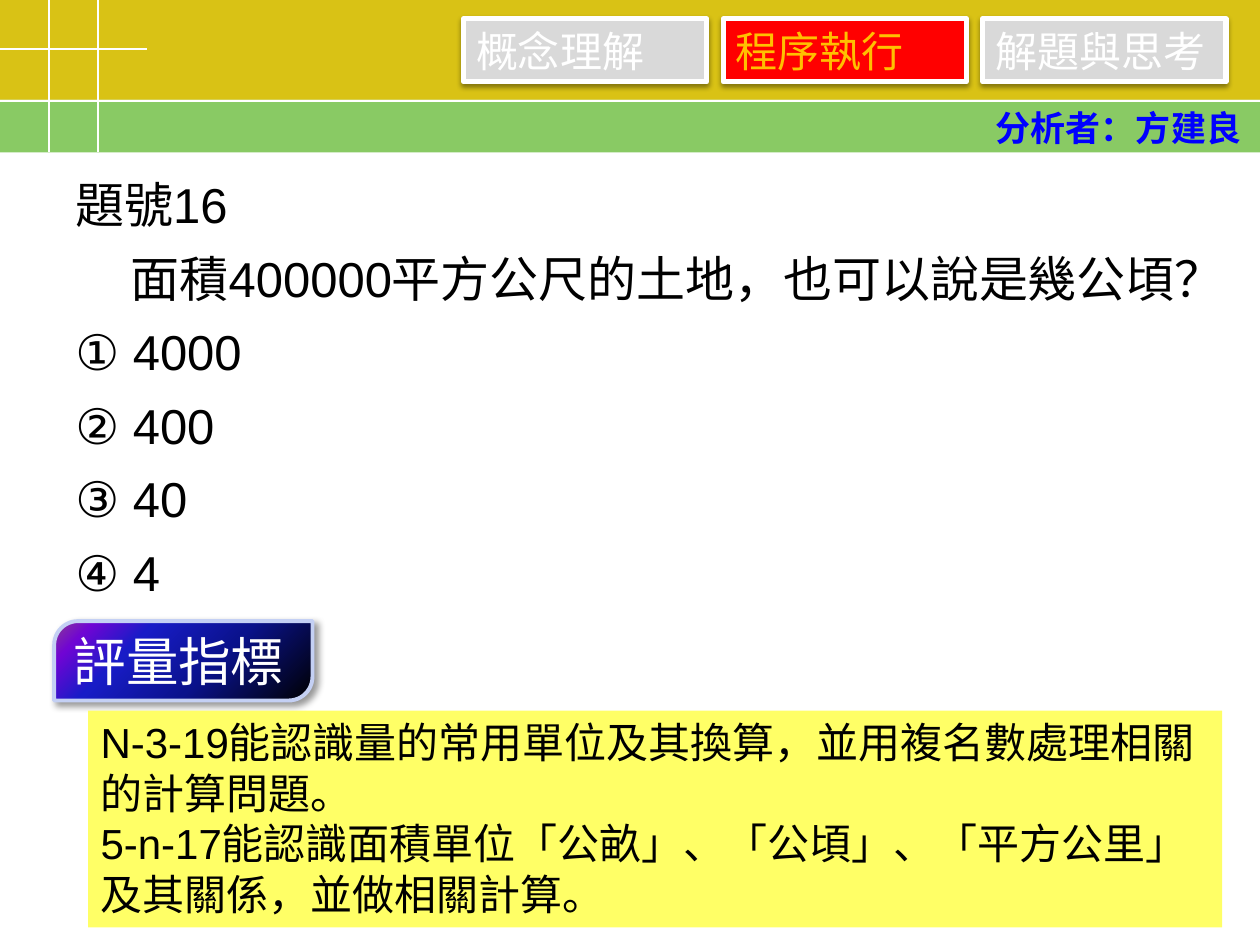
from lxml import etree
from pptx import Presentation
from pptx.dml.color import RGBColor
from pptx.enum import shapes, text
from pptx.oxml.ns import qn
from pptx.util import Inches, Pt

CJK = "Noto Sans CJK JP"


def rgb(value):
    """Turn a hex string into a colour."""
    return RGBColor.from_string(value)


def add_colour(parent, value, alpha=100):
    """Append a colour element with an opacity in percent."""
    clr = etree.SubElement(parent, qn("a:srgbClr"), val=value)
    if alpha < 100:
        etree.SubElement(clr, qn("a:alpha"), val=str(alpha * 1000))


def add_shadow(sp, alpha, blur, dist, angle):
    """Give a shape a black outer shadow."""
    effects = sp._element.spPr.find(qn("a:effectLst"))
    shadow = etree.SubElement(
        effects, qn("a:outerShdw"), blurRad=str(Pt(blur)), dist=str(Pt(dist)),
        dir=str(angle * 60000), algn="tl", rotWithShape="0")
    add_colour(shadow, "000000", alpha)


def add_box(s, box, fill=None, line=None, width=1, kind=shapes.MSO_SHAPE.RECTANGLE):
    """Add a preset shape with a plain fill and an optional line."""
    sp = s.shapes.add_shape(kind, *map(Inches, box))
    sp.shadow.inherit = False
    if fill:
        sp.fill.solid()
        sp.fill.fore_color.rgb = rgb(fill)
    if line:
        sp.line.color.rgb = rgb(line)
        sp.line.width = Pt(width)
    else:
        sp.line.fill.background()
    return sp


def add_line(s, x1, y1, x2, y2):
    """Add a thin white line."""
    line = s.shapes.add_connector(shapes.MSO_CONNECTOR.STRAIGHT, *map(Inches, (x1, y1, x2, y2)))
    line.line.color.rgb = rgb("FFFFFF")
    line.line.width = Pt(1)
    etree.SubElement(line._element.spPr, qn("a:effectLst"))


def write(sp, lines, size, colour, align=text.PP_ALIGN.LEFT, font="Arial",
          anchor=text.MSO_ANCHOR.TOP, bold=False, spacing=None):
    """Write one paragraph per line and return the paragraphs."""
    tf = sp.text_frame
    tf.word_wrap = True
    tf.vertical_anchor = anchor
    tf.text = "\n".join(lines)
    for p in tf.paragraphs:
        p.alignment = align
        if spacing:
            p.line_spacing = Pt(spacing)
        p.font.size = Pt(size)
        p.font.name = font
        p.font.bold = bold
        p.font.color.rgb = rgb(colour)
    return tf.paragraphs


def add_header(s, box):
    """Draw the two colour bands and the white grid lines."""
    x, y, w, h = box
    upper = 0.79
    add_box(s, (x, y + upper, w, h - upper), "89CA64")
    add_box(s, (x, y, w, upper), "D9C215")
    for step in (0.39, 0.78):
        add_line(s, x + step, y, x + step, y + h)
    add_line(s, x, y + 0.39, x + 1.17, y + 0.39)
    add_line(s, x, y + 0.8, x + w, y + 0.8)


def add_tabs(s, box, labels, active):
    """Place the category tabs and highlight the active one."""
    x, y, w, h = box
    tab = 1.93
    step = (w - tab) / (len(labels) - 1)
    for i, label in enumerate(labels):
        fill, colour = ("FF0000", "FFC000") if i == active else ("D9D9D9", "FFFFFF")
        sp = add_box(s, (x + i * step, y, tab, h), fill, "FFFFFF", 3)
        add_shadow(sp, 38, 3.1, 1.6, 90)
        write(sp, [label], 24, colour, text.PP_ALIGN.JUSTIFY, CJK)


def add_author(s, box, name):
    """Write the analyst's name."""
    sp = s.shapes.add_textbox(*map(Inches, box))
    write(sp, [name], 20, "0000FF", text.PP_ALIGN.RIGHT, bold=True)


def add_question(s, box, number, question, choices):
    """Write the question number, the question and its choices."""
    sp = s.shapes.add_textbox(*map(Inches, box))
    paragraphs = write(sp, [number, question, *choices], 28, "000000", spacing=42)
    paragraphs[1]._p.get_or_add_pPr().set("indent", str(Inches(0.44)))


def add_badge(s, box, label):
    """Draw the gradient badge that heads the indicators."""
    sp = add_box(s, box, line="C4D0F4", width=2.25,
                 kind=shapes.MSO_SHAPE.ROUND_2_DIAG_RECTANGLE)
    sp.adjustments[0] = 0.3
    sp.fill.gradient()
    sp.fill.gradient_angle = 135
    stops = sp._element.spPr.find(qn("a:gradFill")).find(qn("a:gsLst"))
    for stop in list(stops):
        stops.remove(stop)
    for pos, colour in ((0, "000000"), (40, "0A128C"), (70, "181CC7"),
                        (88, "7005D4"), (100, "8C3D91")):
        add_colour(etree.SubElement(stops, qn("a:gs"), pos=str(pos * 1000)), colour)
    add_shadow(sp, 40, 4, 3, 45)
    sp.text_frame.margin_top = sp.text_frame.margin_bottom = 0
    write(sp, [label], 30, "FFFFFF", text.PP_ALIGN.JUSTIFY, anchor=text.MSO_ANCHOR.MIDDLE)


def add_indicators(s, box, lines):
    """Write the indicators on a yellow panel."""
    write(add_box(s, box, "FFFF66"), lines, 24, "000000")


def main():
    """Build the slide."""
    prs = Presentation()
    prs.slide_width, prs.slide_height = Inches(10), Inches(7.5)
    s = prs.slides.add_slide(prs.slide_layouts[6])
    add_header(s, (0, 0, 10, 1.21))
    add_badge(s, (0.43, 4.93, 2.05, 0.63), "評量指標")
    add_author(s, (7.61, 0.8, 2.34, 0.44), "分析者：方建良")
    add_question(s, (0.5, 1.22, 9.5, 3.64), "題號16",
                 "面積400000平方公尺的土地，也可以說是幾公頃？",
                 ["① 4000", "② 400", "③ 40", "④ 4"])
    add_indicators(s, (0.7, 5.64, 9, 1.72), [
        "N-3-19能認識量的常用單位及其換算，並用複名數處理相關的計算問題。",
        "5-n-17能認識面積單位「公畝」、「公頃」、「平方公里」及其關係，並做相關計算。"])
    add_tabs(s, (3.68, 0.15, 6.05, 0.5), ["概念理解", "程序執行", "解題與思考"], 1)
    prs.save("out.pptx")


if __name__ == "__main__":
    main()
